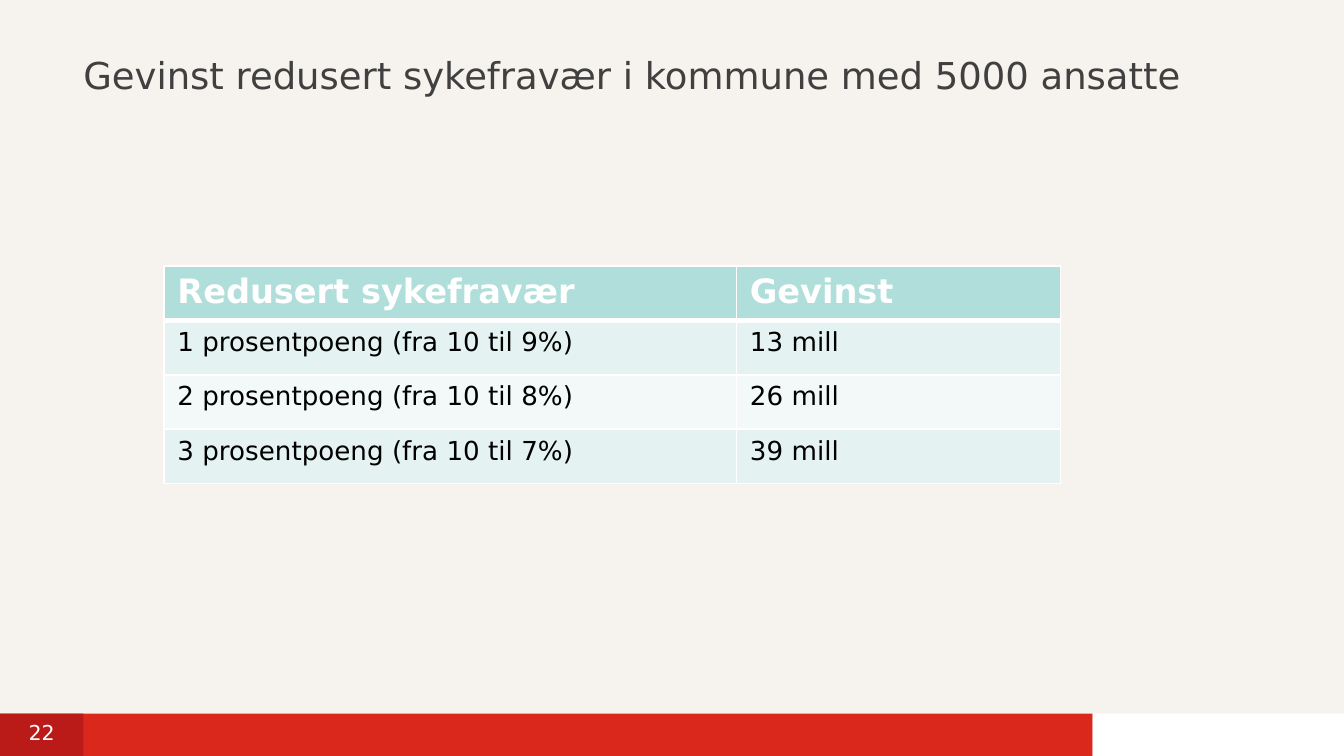
from dataclasses import dataclass

from lxml import etree
from pptx import Presentation
from pptx.dml.color import RGBColor
from pptx.enum import shapes, text
from pptx.oxml import ns
from pptx.util import Inches, Pt


@dataclass(frozen=True)
class Theme:
    font: str = "DejaVu Sans"
    background: str = "F6F3EE"
    white: str = "FFFFFF"
    black: str = "000000"
    title: str = "404040"
    red: str = "DA291C"
    dark_red: str = "BB1B18"
    header: str = "B0DFDB"
    bands: tuple = ("E4F3F1", "F2F9F8")
    title_size: float = 19.8
    header_size: float = 18
    body_size: float = 14
    number_size: float = 11


THEME = Theme()
WIDTH = 10
HEIGHT = WIDTH * 9 / 16
ROWS = [
    ("Redusert sykefravær", "Gevinst"),
    ("1 prosentpoeng (fra 10 til 9%)", "13 mill"),
    ("2 prosentpoeng (fra 10 til 8%)", "26 mill"),
    ("3 prosentpoeng (fra 10 til 7%)", "39 mill"),
]


def fill_solid(fill, color):
    fill.solid()
    fill.fore_color.rgb = RGBColor.from_string(color)


def write(tf, content, size, color, bold=False):
    tf.text = content
    font = tf.paragraphs[0].runs[0].font
    font.name, font.size, font.bold = THEME.font, Pt(size), bold
    font.color.rgb = RGBColor.from_string(color)


def add_bar(s, left, top, width, height, color):
    sp = s.shapes.add_shape(shapes.MSO_SHAPE.RECTANGLE, Inches(left),
                            Inches(top), Inches(width), Inches(height))
    sp.shadow.inherit = False
    fill_solid(sp.fill, color)
    sp.line.fill.background()


def add_text(s, left, top, width, height, content, size, color):
    box = s.shapes.add_textbox(Inches(left), Inches(top), Inches(width), Inches(height))
    tf = box.text_frame
    tf.word_wrap = True
    write(tf, content, size, color)
    return tf


def add_title(s, left, top, width, height, content):
    tf = add_text(s, left, top, width, height, content, THEME.title_size, THEME.title)
    tf.margin_left = tf.margin_top = tf.margin_right = tf.margin_bottom = 0


def add_footer(s, left, top, width, height, number):
    """Red band with a white end field and the slide number at the left."""
    number_width, end_width = 0.62, 1.87
    add_bar(s, left, top, width - end_width, height, THEME.red)
    add_bar(s, left + width - end_width, top, end_width, height, THEME.white)
    add_bar(s, left, top, number_width, height, THEME.dark_red)
    tf = add_text(s, left, top, number_width, height, number,
                  THEME.number_size, THEME.white)
    tf.paragraphs[0].alignment = text.PP_ALIGN.CENTER


def set_borders(cell, **widths):
    """Draw white borders; the keys L, R, T, B give widths in points."""
    tc_pr = cell._tc.get_or_add_tcPr()
    for i, (side, width) in enumerate(widths.items()):
        ln = etree.Element(ns.qn(f"a:ln{side}"), w=str(Pt(width)))
        solid = etree.SubElement(ln, ns.qn("a:solidFill"))
        etree.SubElement(solid, ns.qn("a:srgbClr"), val=THEME.white)
        tc_pr.insert(i, ln)


def add_gain_table(s, left, top, width, height, rows):
    first_width = 4.26
    table = s.shapes.add_table(len(rows), 2, Inches(left), Inches(top),
                               Inches(width), Inches(height)).table
    table.columns[0].width = Inches(first_width)
    table.columns[1].width = Inches(width - first_width)
    for r, values in enumerate(rows):
        is_header = r == 0
        color = THEME.header if is_header else THEME.bands[(r - 1) % 2]
        for c, value in enumerate(values):
            cell = table.cell(r, c)
            fill_solid(cell.fill, color)
            set_borders(cell, L=1, R=1, T=3 if r == 1 else 1, B=3 if is_header else 1)
            write(cell.text_frame, value,
                  THEME.header_size if is_header else THEME.body_size,
                  THEME.white if is_header else THEME.black, is_header)


def main():
    prs = Presentation()
    prs.slide_width, prs.slide_height = Inches(WIDTH), Inches(HEIGHT)
    s = prs.slides.add_slide(prs.slide_layouts[6])
    fill_solid(s.background.fill, THEME.background)
    footer_top = 5.31
    add_footer(s, 0, footer_top, WIDTH, HEIGHT - footer_top, "22")
    add_title(s, 0.62, 0.39, 8.88, 0.66,
              "Gevinst redusert sykefravær i kommune med 5000 ansatte")
    add_gain_table(s, 1.22, 1.98, 6.67, 1.62, ROWS)
    prs.save("out.pptx")


if __name__ == "__main__":
    main()
